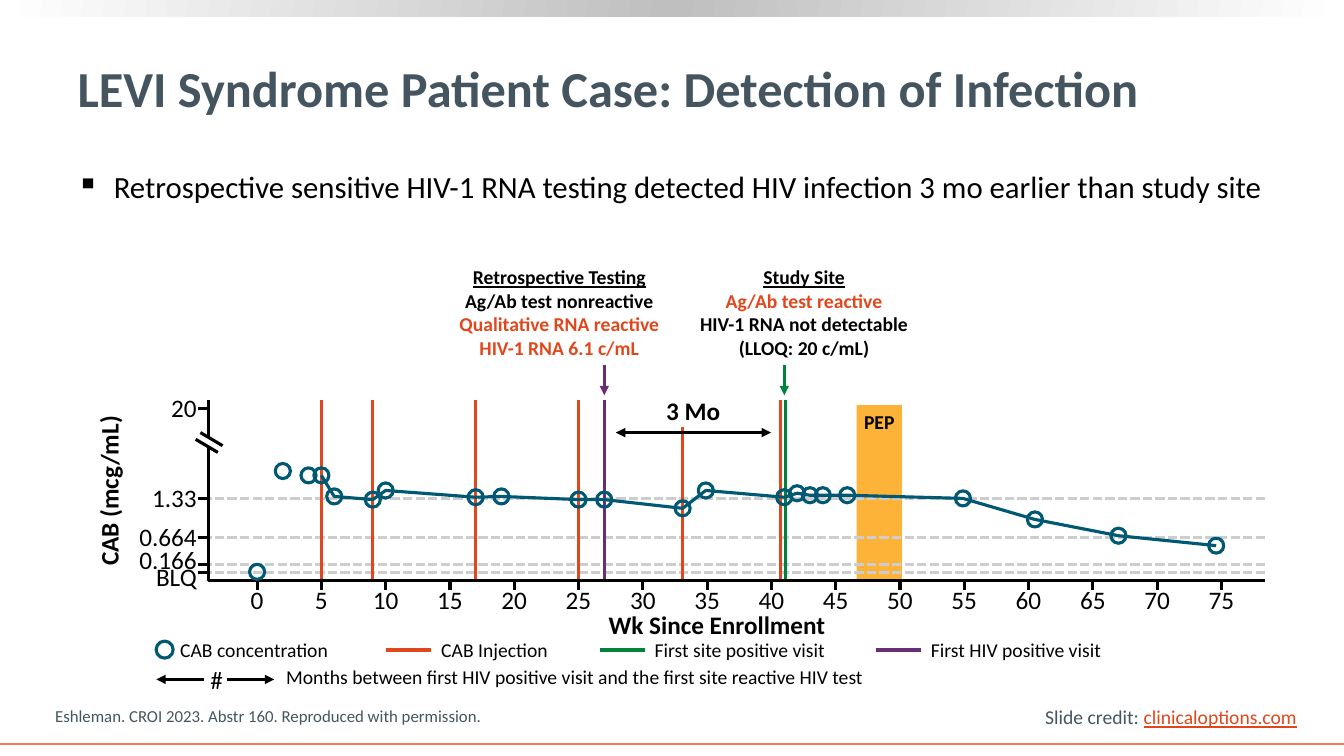
"""Builds the slide on detection of infection in a LEVI syndrome patient case."""
from copy import deepcopy

from pptx import Presentation
from pptx.dml.color import RGBColor
from pptx.enum.dml import MSO_LINE
from pptx.enum.shapes import MSO_CONNECTOR, MSO_SHAPE
from pptx.enum.text import MSO_ANCHOR, PP_ALIGN
from pptx.oxml.ns import qn
from pptx.util import Cm, Pt

rgb = RGBColor.from_string
BLACK, SLATE, TEAL = "000000", "455560", "015873"
ORANGE, GREEN, PURPLE, GREY = "E1471D", "00823B", "682E74", "CDCDCF"
SLIDE_WIDTH = 33.87
AXIS_X, AXIS_Y, AXIS_END, PLOT_TOP = 5.26, 14.63, 31.88, 10.08
WEEK_ZERO, WEEK_WIDTH = 6.48, 0.324

deck = Presentation()
deck.slide_width, deck.slide_height = Cm(SLIDE_WIDTH), Cm(19.05)
page = deck.slides.add_slide(deck.slide_layouts[5])
shapes = page.shapes


def write(text, left, top, width, size=18, bold=False, color=BLACK,
          align=PP_ALIGN.LEFT, height=1.02, wrap=False):
    box = shapes.add_textbox(Cm(left), Cm(top), Cm(width), Cm(height))
    box.text_frame.text = text
    box.text_frame.word_wrap = wrap
    for para in box.text_frame.paragraphs:
        para.alignment = align
        para.font.name, para.font.size, para.font.bold = "Calibri", Pt(size), bold
        para.font.color.rgb = rgb(color)
    return box


def rule(x1, y1, x2, y2, color=BLACK, width=2.25, ends=()):
    line = shapes.add_connector(MSO_CONNECTOR.STRAIGHT, Cm(x1), Cm(y1), Cm(x2), Cm(y2))
    line.line.color.rgb = rgb(color)
    line.line.width = Pt(width)
    properties = line._element.spPr
    for end in ends:
        arrow = properties.find(qn("a:ln")).makeelement(qn(end), {"type": "triangle"})
        properties.find(qn("a:ln")).append(arrow)
    properties.append(properties.makeelement(qn("a:effectLst"), {}))
    return line


# Page frame
band = shapes.add_shape(MSO_SHAPE.RECTANGLE, 0, 0, Cm(SLIDE_WIDTH), Cm(0.41))
band.shadow.inherit = False
band.line.fill.background()
band.fill.gradient()
band.fill.gradient_angle = 170
first_stop, middle_stop = band.fill.gradient_stops
first_stop.color.rgb, middle_stop.color.rgb = rgb("FFFFFF"), rgb("BFBFBF")
first_stop.position, middle_stop.position = 0, 0.5
stops = band._element.spPr.find(qn("a:gradFill")).find(qn("a:gsLst"))
last_stop = deepcopy(stops[0])
last_stop.set("pos", "100000")
stops.append(last_stop)
rule(0, 18.75, SLIDE_WIDTH, 18.75, "F47D55", 1.5)

# Title and message
title = shapes.title
title.left, title.top, title.width, title.height = Cm(1.7), Cm(0.66), Cm(30.2), Cm(3.07)
title.text_frame.text = "LEVI Syndrome Patient Case: Detection of Infection"
title.text_frame.vertical_anchor = MSO_ANCHOR.MIDDLE
para = title.text_frame.paragraphs[0]
para.alignment = PP_ALIGN.LEFT
para.font.name, para.font.size, para.font.bold = "Calibri", Pt(36), True
para.font.color.rgb = rgb(SLATE)

message = write("Retrospective sensitive HIV-1 RNA testing detected HIV infection "
                "3 mo earlier than study site", 1.68, 4.22, 30.96, 22, height=1.93, wrap=True)
para = message.text_frame.paragraphs[0]
para.line_spacing = 0.9
bullet_properties = para._p.get_or_add_pPr()
bullet_properties.set("marL", str(Cm(0.94)))
bullet_properties.set("indent", str(-Cm(0.94)))
bullet = bullet_properties.makeelement(qn("a:buChar"), {"char": "▪"})
bullet_properties.find(qn("a:defRPr")).addprevious(bullet)

# Sources
source = write("Eshleman. CROI 2023. Abstr 160. Reproduced with permission.",
               1.14, 17.65, 22.25, 12, color=SLATE, height=0.76, wrap=True)
source.text_frame.vertical_anchor = MSO_ANCHOR.BOTTOM
credit = write("Slide credit: ", 26.09, 17.65, 6.91, 14, color=SLATE, height=0.86)
span = credit.text_frame.paragraphs[0].add_run()
span.text = "clinicaloptions.com"
span.font.color.rgb = rgb(ORANGE)
span.font.underline = True

# Legend
write("CAB concentration", 4.29, 15.95, 4.27, 14)
for left, width, label, color in [(9.73, 3.23, "CAB Injection", ORANGE),
                                  (15.11, 4.85, "First site positive visit", GREEN),
                                  (22.07, 4.85, "First HIV positive visit", PURPLE)]:
    write(label, left + 1.14, 15.95, width, 14)
    rule(left, 16.38, left + 1.14, 16.38, color)
write("Months between first HIV positive visit and the first site reactive HIV test",
      6.96, 16.64, 15.21, 14)
write("#", 5.05, 16.61, 0.84)
for start, tip in [(5.13, 3.94), (5.72, 6.91)]:
    rule(start, 17.12, tip, 17.12, ends=["a:tailEnd"])

# Treatment period
pep = shapes.add_shape(MSO_SHAPE.RECTANGLE, Cm(21.59), Cm(10.21), Cm(1.14), Cm(4.39))
pep.shadow.inherit = False
pep.fill.solid()
pep.fill.fore_color.rgb = rgb("FDB338")
pep.line.fill.background()
frame = pep.text_frame
frame.text = "PEP"
frame.margin_left = frame.margin_right = 0
frame.vertical_anchor = MSO_ANCHOR.TOP
para = frame.paragraphs[0]
para.alignment = PP_ALIGN.CENTER
para.font.name, para.font.size, para.font.bold = "Calibri", Pt(14), True
para.font.color.rgb = rgb(BLACK)

# Axes
for label, level, label_top in [("20", 10.29, 9.75), ("1.33", 12.57, 12.04),
                                ("0.664", 13.54, 13), ("0.166", 14.22, 13.59),
                                ("BLQ", 14.43, 14.02)]:
    if label != "20":
        grid = rule(AXIS_END, level, AXIS_X, level, GREY)
        grid.line.dash_style = MSO_LINE.SQUARE_DOT
    rule(AXIS_X - 0.28, level, AXIS_X, level)
    write(label, 3.23, label_top, 1.98, align=PP_ALIGN.RIGHT)
for week in range(0, 80, 5):
    x = WEEK_ZERO + week * WEEK_WIDTH
    rule(x, 14.58, x, 14.86)
    write(str(week), x - 0.58, 14.61, 1.16, align=PP_ALIGN.CENTER)
write("CAB (mcg/mL)", 0.58, 11.84, 4.32, bold=True).rotation = 270
write("Wk Since Enrollment", 15.09, 15.24, 6.25, bold=True)
rule(AXIS_X, PLOT_TOP, AXIS_X, 11)
for left, top in [(4.93, 11.07), (5.05, 10.9)]:
    rule(left, top, left + 0.56, top + 0.33)

# Visits and injections
for week, top, color in [(5, PLOT_TOP, ORANGE), (9, PLOT_TOP, ORANGE), (17, PLOT_TOP, ORANGE),
                         (25, PLOT_TOP, ORANGE), (27, PLOT_TOP, PURPLE), (33.1, 10.77, ORANGE),
                         (40.7, PLOT_TOP, ORANGE), (41.1, PLOT_TOP, GREEN)]:
    x = WEEK_ZERO + week * WEEK_WIDTH
    rule(x, top, x, 14.61, color)
for week, color in [(27, PURPLE), (41, GREEN)]:
    x = WEEK_ZERO + week * WEEK_WIDTH
    rule(x, 9.19, x, 9.96, color, ends=["a:tailEnd"])
write("3 Mo", 16.54, 9.83, 1.88, bold=True)
rule(15.52, 10.9, 19.43, 10.9, ends=["a:headEnd", "a:tailEnd"])

# Concentrations
samples = [(0, 14.41), (2, 11.87), (4, 11.98), (5, 11.98), (6, 12.51), (9, 12.59),
           (10, 12.36), (17, 12.53), (19, 12.51), (25, 12.59), (27, 12.59), (33.1, 12.81),
           (34.9, 12.36), (41, 12.53), (42, 12.43), (43, 12.48), (44, 12.48), (45.9, 12.48),
           (54.9, 12.56), (60.5, 13.09), (67, 13.5), (74.6, 13.75)]
markers = [(WEEK_ZERO + week * WEEK_WIDTH, y, 0.38) for week, y in samples]
curve_points = [(x, y) for x, y, size in markers[3:]]
axis_points = [(AXIS_X, 11.28), (AXIS_X, AXIS_Y), (AXIS_END, AXIS_Y)]
outlines = []
for points, color in [(axis_points, BLACK), (curve_points, TEAL)]:
    corners = [(Cm(x), Cm(y)) for x, y in points]
    builder = shapes.build_freeform(*corners[0])
    builder.add_line_segments(corners[1:], close=False)
    outlines.append((builder.convert_to_shape(), color))
for x, y, size in markers + [(4.15, 16.37, 0.43)]:
    ring = shapes.add_shape(MSO_SHAPE.OVAL, Cm(x - size / 2), Cm(y - size / 2),
                            Cm(size), Cm(size))
    outlines.append((ring, TEAL))
for outline, color in outlines:
    outline.shadow.inherit = False
    outline.fill.background()
    outline.line.color.rgb = rgb(color)
    outline.line.width = Pt(2.25)

# Test results
retrospective = ["Retrospective Testing", "Ag/Ab test nonreactive",
                 "Qualitative RNA reactive", "HIV-1 RNA 6.1 c/mL"]
study_site = ["Study Site", "Ag/Ab test reactive",
              "HIV-1 RNA not detectable", "(LLOQ: 20 c/mL)"]
for left, width, results, reactive in [(10.31, 7.57, retrospective, (2, 3)),
                                       (17.37, 5.79, study_site, (1,))]:
    box = write("\n".join(results), left, 6.55, width, 14, True,
                align=PP_ALIGN.CENTER, height=2.64, wrap=True)
    box.text_frame.vertical_anchor = MSO_ANCHOR.MIDDLE
    paras = box.text_frame.paragraphs
    paras[0].font.underline = True
    for index in reactive:
        paras[index].font.color.rgb = rgb(ORANGE)

deck.save("out.pptx")
